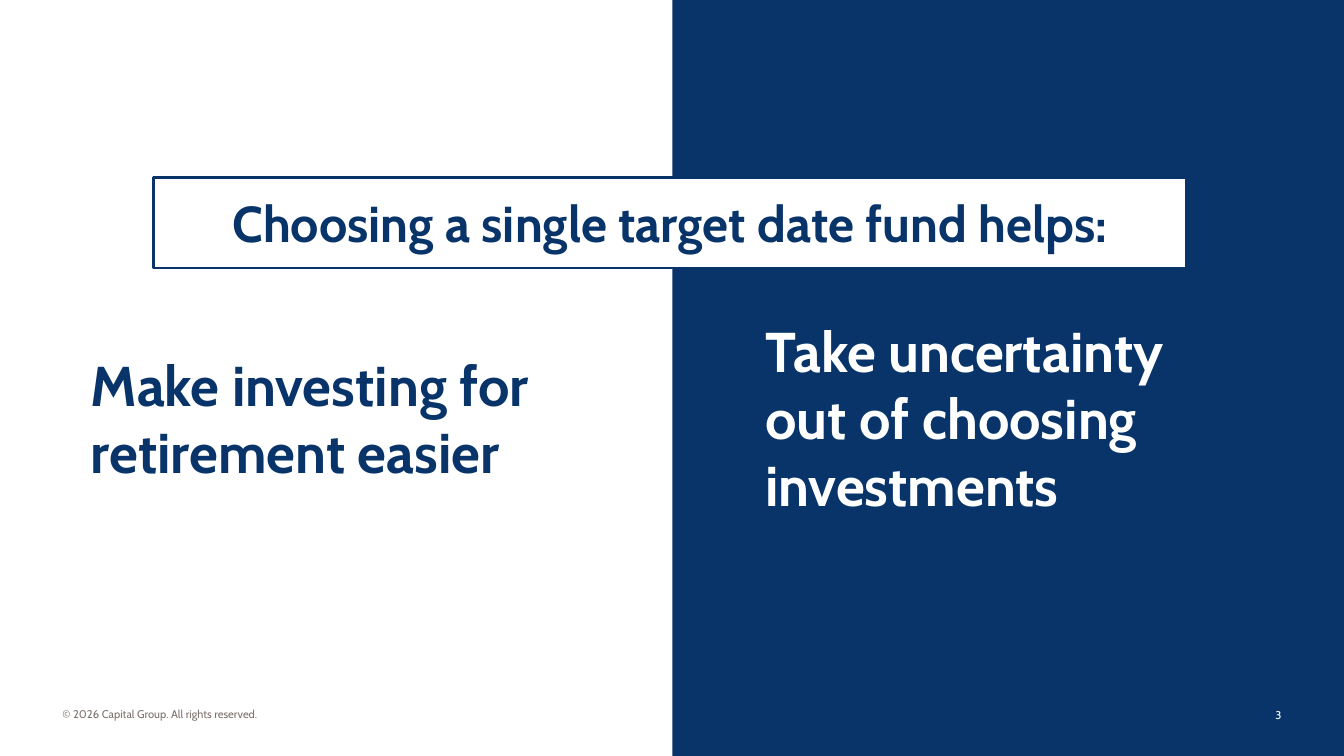
import dataclasses

import pptx
import pptx.dml.color
import pptx.enum.shapes
import pptx.enum.text
import pptx.util

Inches = pptx.util.Inches
Pt = pptx.util.Pt
Align = pptx.enum.text.PP_ALIGN
Anchor = pptx.enum.text.MSO_ANCHOR


@dataclasses.dataclass(frozen=True)
class Theme:
    font: str = "Cabin"
    navy: str = "083469"
    white: str = "FFFFFF"
    grey: str = "7D726D"
    banner_size: int = 36
    benefit_size: int = 40
    footer_size: int = 8
    banner_line: int = 2


@dataclasses.dataclass(frozen=True)
class Box:
    left: float
    top: float
    width: float
    height: float

    def lengths(self) -> tuple:
        return tuple(Inches(value) for value in dataclasses.astuple(self))


@dataclasses.dataclass(frozen=True)
class Label:
    text: str
    box: Box
    size: int
    color: str
    bold: bool = False
    align: Align = Align.LEFT
    anchor: Anchor = Anchor.TOP
    spacing: float = 1.0


THEME = Theme()
SLIDE_WIDTH, SLIDE_HEIGHT = 13.33, 7.5
HALF = 6.67

LABELS = [
    # Benefits, one on each half
    Label("Make investing for retirement easier", Box(0.9, 3.13, 4.69, 2.02),
          THEME.benefit_size, THEME.navy, bold=True, anchor=Anchor.MIDDLE),
    Label("Take uncertainty out of choosing investments", Box(7.59, 3.13, 4.82, 2.02),
          THEME.benefit_size, THEME.white, bold=True, anchor=Anchor.MIDDLE),
    # Footer
    Label("© 2026 Capital Group. All rights reserved.", Box(0.62, 7, 2.26, 0.13),
          THEME.footer_size, THEME.grey, spacing=1.1),
    Label("3", Box(11.93, 7.01, 0.78, 0.14),
          THEME.footer_size, THEME.white, align=Align.RIGHT, spacing=1.1),
]


def rgb(color: str) -> pptx.dml.color.RGBColor:
    return pptx.dml.color.RGBColor.from_string(color)


def write(frame, text: str, *, size: int, color: str, bold: bool = False,
          align: Align = Align.LEFT, anchor: Anchor = Anchor.TOP,
          spacing: float = 1.0, inset: float = 0) -> None:
    frame.word_wrap = True
    frame.vertical_anchor = anchor
    frame.margin_left = frame.margin_right = Inches(inset)
    frame.margin_top = frame.margin_bottom = Inches(inset)
    paragraph = frame.paragraphs[0]
    paragraph.alignment = align
    paragraph.line_spacing = spacing
    run = paragraph.add_run()
    run.text = text
    run.font.name = THEME.font
    run.font.size = Pt(size)
    run.font.bold = bold
    run.font.color.rgb = rgb(color)


def add_panel(slide, box: Box, fill: str, line: str | None = None):
    panel = slide.shapes.add_shape(
        pptx.enum.shapes.MSO_SHAPE.RECTANGLE, *box.lengths())
    panel.shadow.inherit = False
    panel.fill.solid()
    panel.fill.fore_color.rgb = rgb(fill)
    if line:
        panel.line.color.rgb = rgb(line)
        panel.line.width = Pt(THEME.banner_line)
    else:
        panel.line.fill.background()
    return panel


def add_label(slide, label: Label) -> None:
    frame = slide.shapes.add_textbox(*label.box.lengths()).text_frame
    write(frame, label.text, size=label.size, color=label.color, bold=label.bold,
          align=label.align, anchor=label.anchor, spacing=label.spacing)


def main() -> None:
    deck = pptx.Presentation()
    deck.slide_width = Inches(SLIDE_WIDTH)
    deck.slide_height = Inches(SLIDE_HEIGHT)
    slide = deck.slides.add_slide(deck.slide_layouts[6])

    # Navy right half
    add_panel(slide, Box(HALF, 0, SLIDE_WIDTH - HALF, SLIDE_HEIGHT), THEME.navy)

    # Banner across both halves
    banner = add_panel(slide, Box(1.52, 1.76, 10.25, 0.9), THEME.white, THEME.navy)
    write(banner.text_frame, "Choosing a single target date fund helps:",
          size=THEME.banner_size, color=THEME.navy, bold=True,
          align=Align.CENTER, anchor=Anchor.MIDDLE, inset=0.06)

    # Benefits and footer
    for label in LABELS:
        add_label(slide, label)

    deck.save("out.pptx")


if __name__ == "__main__":
    main()
